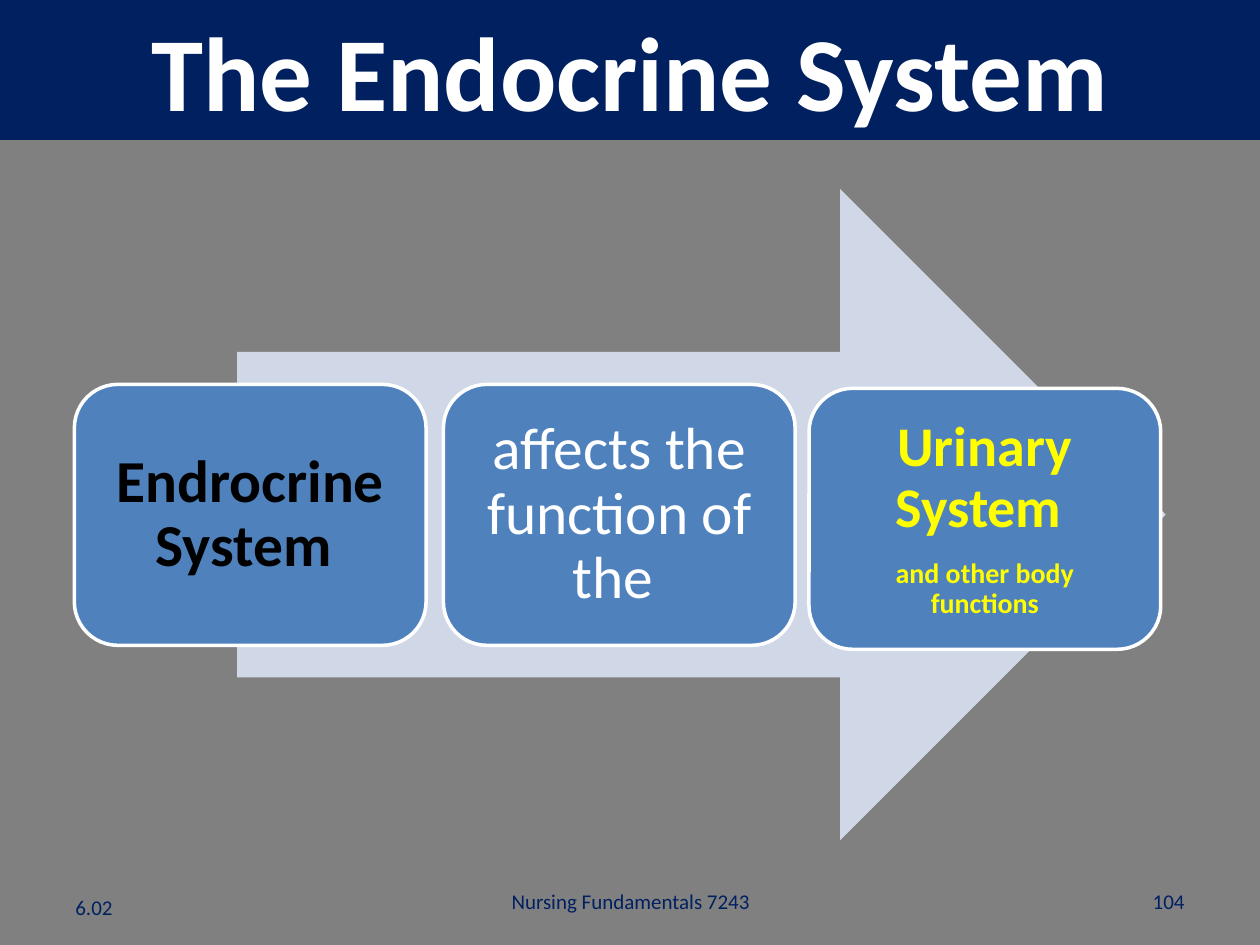
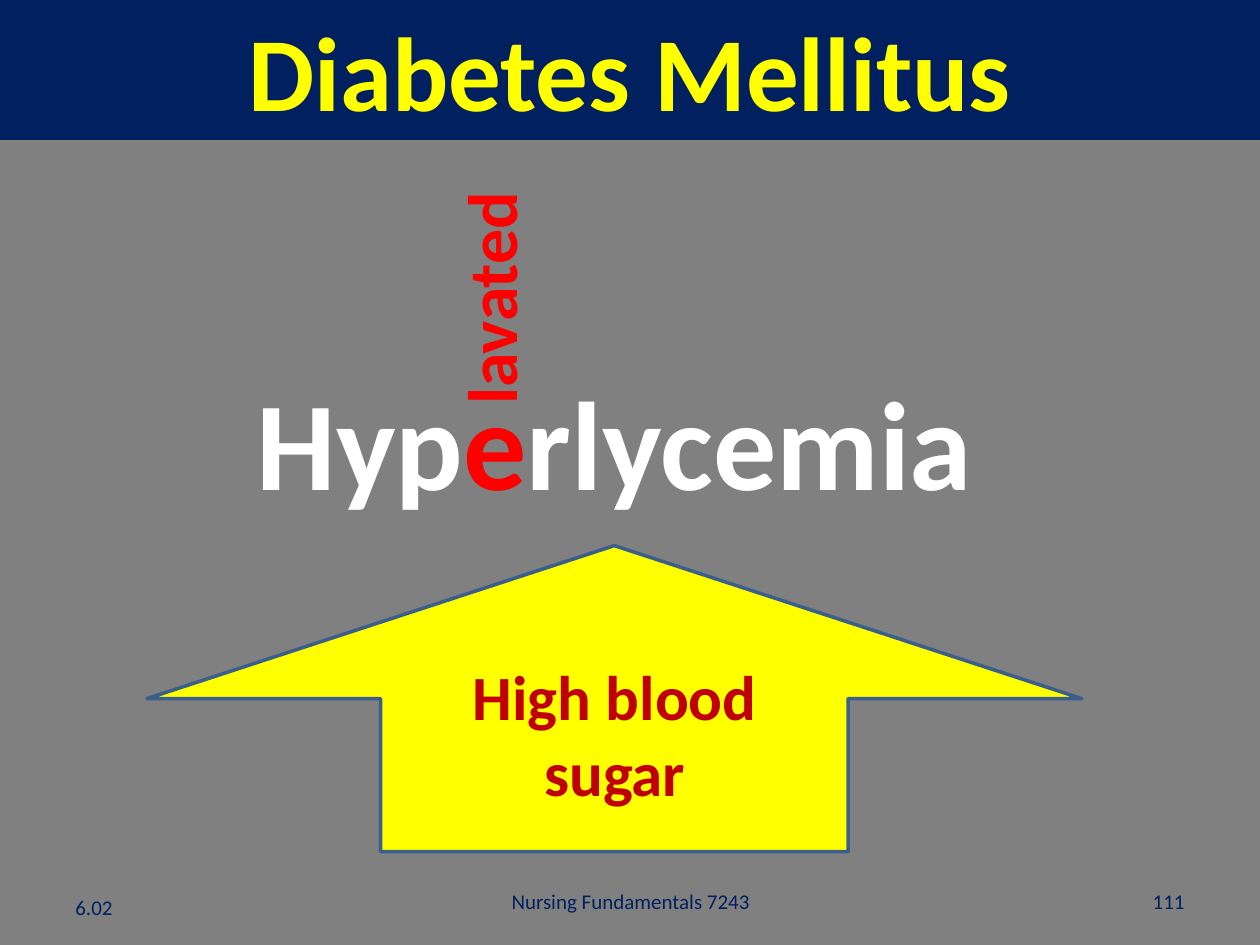
import pptx
import pptx.util
import pptx.dml.color
import pptx.enum.shapes
import pptx.enum.text

Cm = pptx.util.Cm
Pt = pptx.util.Pt
SHAPES = pptx.enum.shapes.MSO_SHAPE
ALIGN = pptx.enum.text.PP_ALIGN
ANCHOR = pptx.enum.text.MSO_ANCHOR
AUTO_SIZE = pptx.enum.text.MSO_AUTO_SIZE

COLORS = {
    "background": "808080", "navy": "002060", "white": "FFFFFF",
    "yellow": "FFFF00", "black": "000000", "red": "FF0000",
    "dark red": "C00000", "card": "4F81BD", "pale blue": "D0D8E8",
    "outline": "3A5F8C",
}


def rgb(name):
    return pptx.dml.color.RGBColor.from_string(COLORS[name])


class Deck:
    font_name = "Calibri"

    def __init__(self):
        self.presentation = pptx.Presentation()
        self.presentation.slide_width = Cm(25.4)
        self.presentation.slide_height = Cm(19.05)
        self.slide = None

    def new_slide(self, title, title_color, number):
        """Start a slide with its background, footers and title band."""
        self.slide = self.presentation.slides.add_slide(self.presentation.slide_layouts[6])
        fill = self.slide.background.fill
        fill.solid()
        fill.fore_color.rgb = rgb("background")
        self.footer("Nursing Fundamentals 7243", 8.69, 17.65, 8.05, ALIGN.CENTER)
        self.footer(number, 18.21, 17.65, 5.92, ALIGN.RIGHT)
        self.footer("6.02", 1.27, 17.78, 5.92, ALIGN.LEFT)
        band = self.shape(SHAPES.RECTANGLE, (0, 0, 25.4, 2.82), "navy")
        self.add_text(band, title, 60, title_color, bold=True)

    def footer(self, text, left, top, width, align):
        box = self.text_box((left, top, width, 1.02), text, 12, "navy", align=align)
        box.text_frame.vertical_anchor = ANCHOR.MIDDLE

    def shape(self, kind, place, fill, line=None):
        shape = self.slide.shapes.add_shape(kind, *map(Cm, place))
        shape.shadow.inherit = False
        shape.fill.solid()
        shape.fill.fore_color.rgb = rgb(fill)
        if line:
            shape.line.color.rgb = rgb(line)
            shape.line.width = Pt(2)
        else:
            shape.line.fill.background()
        return shape

    def text_box(self, place, text, size, color, wrap=True, **style):
        box = self.slide.shapes.add_textbox(*map(Cm, place))
        self.add_text(box, text, size, color, **style)
        box.text_frame.word_wrap = wrap
        return box

    def add_text(self, shape, text, size, color, bold=False, align=ALIGN.CENTER, spacing=None):
        """Add one paragraph, reusing the first while it is empty."""
        frame = shape.text_frame
        paragraph = frame.paragraphs[-1]
        if paragraph.text:
            paragraph = frame.add_paragraph()
        paragraph.text = text
        paragraph.alignment = align
        paragraph.line_spacing = spacing
        font = paragraph.font
        font.name, font.size, font.bold = self.font_name, Pt(size), bold
        font.color.rgb = rgb(color)
        return paragraph

    def card(self, left, top, lines, bold=True):
        """Rounded card; lines holds (text, size, color) paragraphs."""
        card = self.shape(SHAPES.ROUNDED_RECTANGLE, (left, top, 7.09, 5.26), "card", "white")
        frame = card.text_frame
        frame.margin_left = frame.margin_right = Cm(0.35)
        frame.margin_top = frame.margin_bottom = Cm(0.35)
        for text, size, color in lines:
            paragraph = self.add_text(card, text, size, color, bold, spacing=0.9)
            if text != lines[-1][0]:
                paragraph.space_after = Pt(size * 0.35)


def endocrine_slide(deck):
    deck.new_slide("The Endocrine System", "white", "104")
    deck.shape(SHAPES.RIGHT_ARROW, (4.78, 3.81, 18.72, 13.13), "pale blue")
    deck.card(1.5, 7.75, [("Endrocrine System ", 34, "black")])
    deck.card(8.94, 7.75, [("affects the function of the ", 34, "white")], bold=False)
    deck.card(16.31, 7.83, [("Urinary System ", 32, "yellow"),
                            ("and other body functions", 16, "yellow")])


def diabetes_slide(deck):
    deck.new_slide("Diabetes Mellitus", "yellow", "111")

    # Main word with one highlighted letter
    word = deck.text_box((4.45, 7.82, 15.88, 2.77), "Hyp", 72, "white", bold=True, spacing=0.8)
    paragraph = word.text_frame.paragraphs[0]
    for text, color in (("e", "red"), ("rlycemia", "white")):
        run = paragraph.add_run()
        run.text = text
        run.font.color.rgb = rgb(color)

    # Arrow pointing up at the word
    deck.shape(SHAPES.UP_ARROW, (2.96, 11, 18.85, 6.17), "yellow", "outline")
    deck.text_box((8.05, 13.13, 8.69, 3.33), "High blood sugar", 36, "dark red", bold=True)

    # Vertical word rising from the highlighted letter
    rising = deck.text_box((8.89, 3.81, 2.24, 4.6), "lavated", 40, "red",
                           wrap=False, bold=True, align=ALIGN.LEFT)
    rising.text_frame.auto_size = AUTO_SIZE.SHAPE_TO_FIT_TEXT
    rising.text_frame._txBody.bodyPr.set("vert", "vert270")


def main():
    deck = Deck()
    endocrine_slide(deck)
    diabetes_slide(deck)
    deck.presentation.save("out.pptx")


if __name__ == "__main__":
    main()
